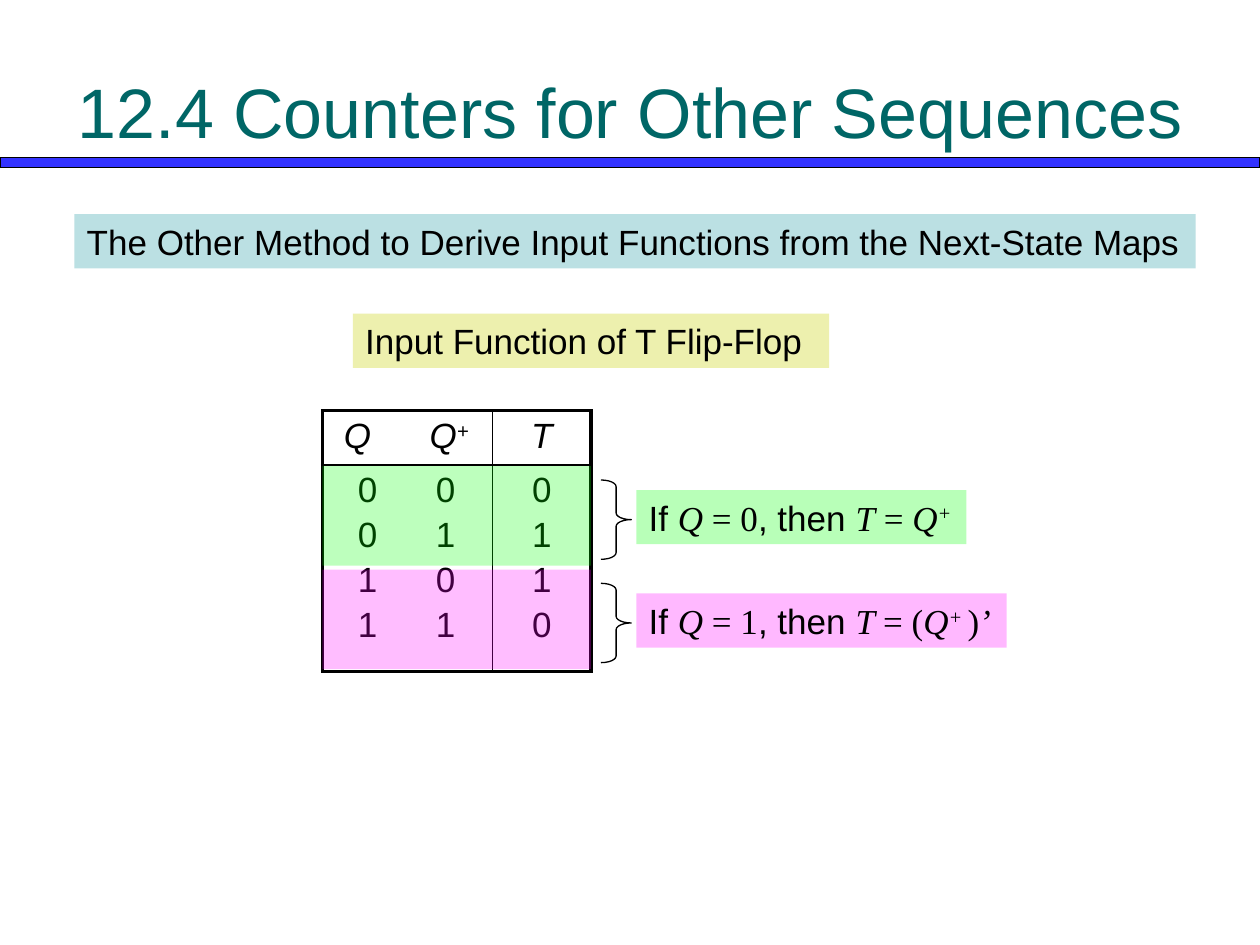
from dataclasses import dataclass
from typing import Optional

from lxml.etree import SubElement
from pptx import Presentation
from pptx.dml.color import RGBColor
from pptx.enum.shapes import MSO_SHAPE
from pptx.enum.text import MSO_ANCHOR, MSO_AUTO_SIZE, PP_ALIGN
from pptx.oxml.ns import qn
from pptx.util import Inches, Pt

BLACK = RGBColor(0x00, 0x00, 0x00)
BLUE = RGBColor(0x33, 0x33, 0xFF)
TEAL = RGBColor(0x00, 0x66, 0x66)
PALE_TEAL = RGBColor(0xBB, 0xE0, 0xE3)
PALE_YELLOW = RGBColor(0xED, 0xF0, 0xAE)
GREEN = RGBColor(0x00, 0xFF, 0x00)
MAGENTA = RGBColor(0xFF, 0x00, 0xFF)
SANS = "Arial"
SERIF = "Times New Roman"
THICK, THIN = 2.25, 1
TABLE_LEFT, TABLE_TOP, TABLE_WIDTH = 2.56, 3.26, 2.13
COLUMN_WIDTHS = (1.35, 0.78)
ROW_HEIGHTS = (0.43, 1.64)


@dataclass
class Piece:
    text: str
    font: str = SANS
    italic: bool = False
    raised: bool = False


@dataclass
class Rule:
    top: float
    band_top: float
    width: float
    color: RGBColor
    pieces: list[Piece]


@dataclass
class Cell:
    row: int
    column: int
    lines: list[list[Piece]]
    left_inset: float = 0.1
    tab: Optional[float] = None


def add_box(slide, left: float, top: float, width: float, height: float,
            fill: Optional[RGBColor] = None, line: Optional[RGBColor] = None,
            opacity: int = 100, kind=MSO_SHAPE.RECTANGLE):
    shape = slide.shapes.add_shape(
        kind, Inches(left), Inches(top), Inches(width), Inches(height))
    shape.shadow.inherit = False
    if fill is None:
        shape.fill.background()
    else:
        shape.fill.solid()
        shape.fill.fore_color.rgb = fill
        if opacity < 100:
            color = shape.fill._xPr.find(qn("a:solidFill"))[0]
            SubElement(color, qn("a:alpha")).set("val", str(opacity * 1000))
    if line is None:
        shape.line.fill.background()
    else:
        shape.line.color.rgb = line
        shape.line.width = Pt(0.75)
    return shape


def write_line(paragraph, pieces: list[Piece], alignment) -> None:
    paragraph.alignment = alignment
    paragraph.font.size = Pt(20)
    paragraph.font.color.rgb = BLACK
    for piece in pieces:
        run = paragraph.add_run()
        run.text = piece.text
        run.font.name = piece.font
        run.font.italic = piece.italic
        if piece.raised:
            run._r.get_or_add_rPr().set("baseline", "30000")


def add_label(slide, left: float, top: float, width: float, fill: RGBColor,
              pieces: list[Piece], opacity: int = 100, wrap: bool = True) -> None:
    shape = add_box(slide, left, top, width, 0.43, fill, opacity=opacity)
    shape.text_frame.word_wrap = wrap
    shape.text_frame.vertical_anchor = MSO_ANCHOR.TOP
    write_line(shape.text_frame.paragraphs[0], pieces, PP_ALIGN.LEFT)


def add_border(cell, side: str, width: float) -> None:
    border = SubElement(cell._tc.get_or_add_tcPr(), qn(f"a:{side}"),
                        w=str(Pt(width)))
    fill = SubElement(border, qn("a:solidFill"))
    SubElement(fill, qn("a:srgbClr"), val=str(BLACK))


def fill_cell(table, content: Cell) -> None:
    cell = table.cell(content.row, content.column)
    cell.margin_left = Inches(content.left_inset)
    for index, pieces in enumerate(content.lines):
        frame = cell.text_frame
        paragraph = frame.add_paragraph() if index else frame.paragraphs[0]
        alignment = PP_ALIGN.LEFT if content.tab else PP_ALIGN.CENTER
        write_line(paragraph, pieces, alignment)
        paragraph.space_before = Pt(3.3 if index else 0)
        if content.tab:
            properties = paragraph._p.get_or_add_pPr()
            stops = SubElement(properties, qn("a:tabLst"))
            SubElement(stops, qn("a:tab"), pos=str(Inches(content.tab)), algn="l")
            defaults = properties.find(qn("a:defRPr"))
            if defaults is not None:
                properties.append(defaults)
    add_border(cell, "lnL", THIN if content.column else THICK)
    add_border(cell, "lnR", THICK if content.column else THIN)
    add_border(cell, "lnT", THIN if content.row else THICK)
    add_border(cell, "lnB", THICK if content.row else THIN)
    cell.fill.background()


def add_state_table(slide) -> None:
    table = slide.shapes.add_table(
        2, 2, Inches(TABLE_LEFT), Inches(TABLE_TOP),
        Inches(TABLE_WIDTH), Inches(sum(ROW_HEIGHTS))).table
    table.first_row = False
    table.horz_banding = False
    for column, width in zip(table.columns, COLUMN_WIDTHS):
        column.width = Inches(width)
    for row, height in zip(table.rows, ROW_HEIGHTS):
        row.height = Inches(height)
    states = ("0\t0", "0\t1", "1\t0", "1\t1")
    header = [Piece("Q\tQ", italic=True), Piece("+", italic=True, raised=True)]
    for content in (
        Cell(0, 0, [header], 0.17, 0.68),
        Cell(0, 1, [[Piece("T", italic=True)]]),
        Cell(1, 0, [[Piece(state)] for state in states], 0.28, 0.62),
        Cell(1, 1, [[Piece(value)] for value in "0110"]),
    ):
        fill_cell(table, content)


def add_rule(slide, rule: Rule) -> None:
    add_label(slide, 5.05, rule.top, rule.width, rule.color, rule.pieces,
              opacity=28, wrap=False)
    brace = add_box(slide, 4.77, rule.top - 0.08, 0.24, 0.63, line=BLACK,
                    kind=MSO_SHAPE.RIGHT_BRACE)
    brace.adjustments[0] = 0.22
    add_box(slide, TABLE_LEFT, rule.band_top, TABLE_WIDTH, 0.79, rule.color,
            opacity=26)


def add_title(slide) -> None:
    title = slide.shapes.title
    title.left, title.top = Inches(0.5), Inches(0.25)
    title.width, title.height = Inches(9), Inches(1.25)
    title.text_frame.text = "12.4 Counters for Other Sequences"
    title.text_frame.auto_size = MSO_AUTO_SIZE.NONE
    title.text_frame.vertical_anchor = MSO_ANCHOR.MIDDLE
    paragraph = title.text_frame.paragraphs[0]
    paragraph.alignment = PP_ALIGN.CENTER
    paragraph.font.name = SANS
    paragraph.font.size = Pt(40)
    paragraph.font.color.rgb = TEAL


def main() -> None:
    presentation = Presentation()
    presentation.slide_width, presentation.slide_height = Inches(10), Inches(7.5)
    slide = presentation.slides.add_slide(presentation.slide_layouts[5])
    add_title(slide)
    add_box(slide, 0, 1.25, 10, 0.08, BLUE, BLACK)
    add_label(slide, 0.59, 1.7, 8.9, PALE_TEAL, [Piece(
        "The Other Method to Derive Input Functions from the Next-State Maps")])
    add_state_table(slide)
    for rule in (
        Rule(3.89, 3.7, 2.62, GREEN, [
            Piece("If "), Piece("Q ", SERIF, True), Piece("= 0", SERIF),
            Piece(", then "), Piece("T", SERIF, True), Piece(" = ", SERIF),
            Piece("Q", SERIF, True), Piece("+", SERIF, True, True)]),
        Rule(4.71, 4.52, 2.94, MAGENTA, [
            Piece("If "), Piece("Q ", SERIF, True), Piece("= 1", SERIF),
            Piece(", then "), Piece("T ", SERIF, True), Piece("= (", SERIF),
            Piece("Q", SERIF, True), Piece("+ ", SERIF, True, True),
            Piece(")", SERIF), Piece("’", SERIF, True)]),
    ):
        add_rule(slide, rule)
    add_label(slide, 2.8, 2.49, 3.78, PALE_YELLOW,
              [Piece("Input Function of T Flip-Flop")])
    presentation.save("out.pptx")


if __name__ == "__main__":
    main()
